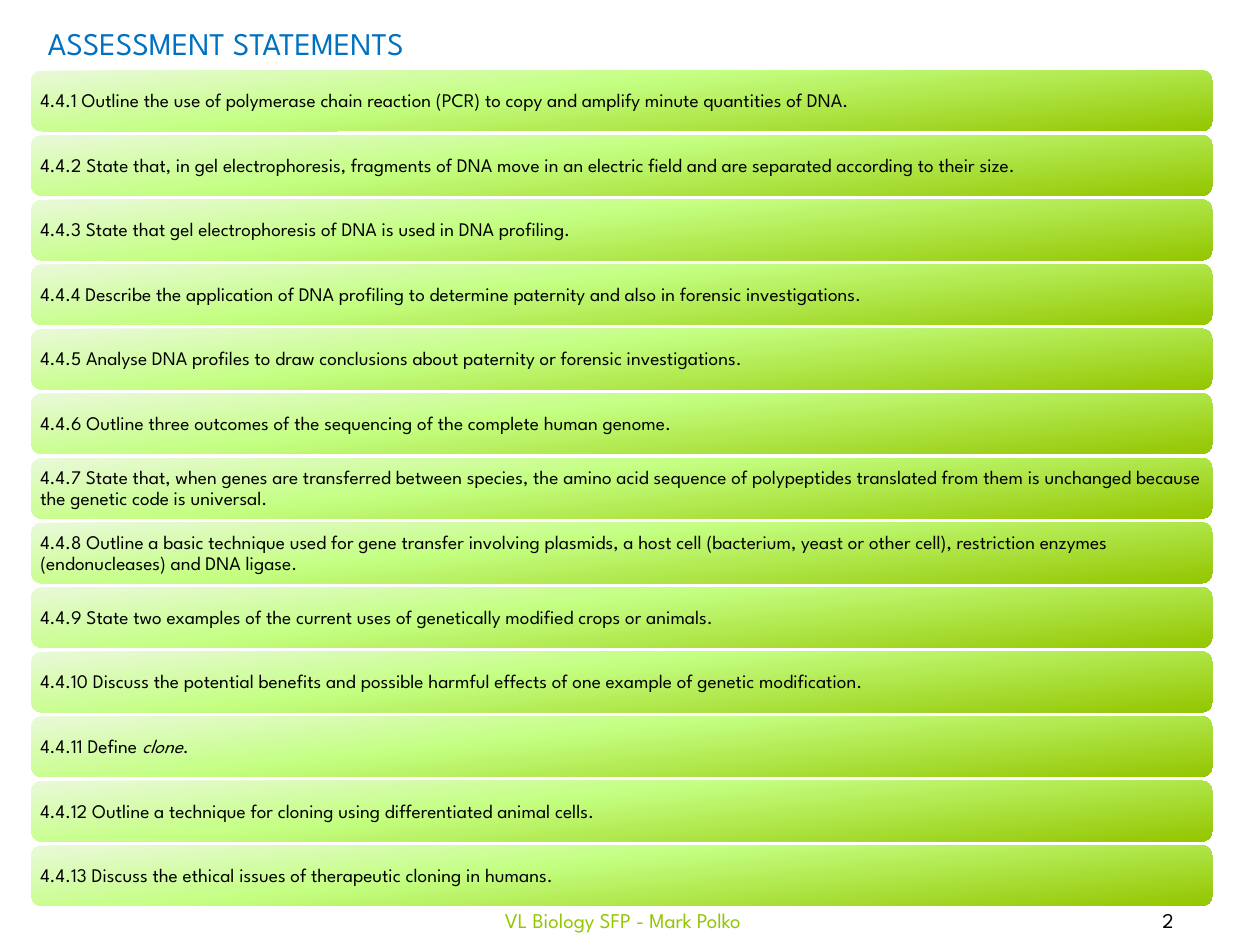
from copy import deepcopy
from dataclasses import dataclass

from pptx import Presentation
from pptx.dml.color import RGBColor
from pptx.enum.shapes import MSO_SHAPE as Shape
from pptx.enum.text import MSO_ANCHOR as Anchor, MSO_AUTO_SIZE as AutoSize, PP_ALIGN as Align
from pptx.util import Inches, Pt


@dataclass(frozen=True)
class Theme:
    font: str = "League Spartan"
    title: str = "0070C0"
    text: str = "000000"
    accent: str = "94C600"
    gradient: tuple = ((0, "EAF9DA"), (0.4, "C4FF82"), (1, "94C600"))
    title_size: int = 18
    footer_size: int = 12
    body_size: int = 11


theme = Theme()


def add_text(parent, left, top, width, height, runs, size, color, align=Align.LEFT, anchor=Anchor.MIDDLE):
    box = parent.shapes.add_textbox(Inches(left), Inches(top), Inches(width), Inches(height))
    frame = box.text_frame
    frame.word_wrap = True
    frame.vertical_anchor = anchor
    para = frame.paragraphs[0]
    para.alignment = align
    for words, italic in runs:
        span = para.add_run()
        span.text = words
        span.font.name = theme.font
        span.font.size = Pt(size)
        span.font.italic = italic
        span.font.color.rgb = RGBColor.from_string(color)
    return frame


def fill_gradient(shape):
    shape.fill.gradient()
    shape.fill.gradient_angle = 276
    stop_list = shape.fill._fill._gradFill.gsLst
    stop_list.append(deepcopy(stop_list[-1]))
    for stop, (position, color) in zip(shape.fill.gradient_stops, theme.gradient):
        stop.position = position
        stop.color.rgb = RGBColor.from_string(color)


deck = Presentation()
deck.slide_width, deck.slide_height = Inches(10), Inches(7.5)
page = deck.slides.add_slide(deck.slide_layouts[6])

add_text(page, 8.54, 7.1, 1.46, 0.4, [("2", False)], theme.footer_size, theme.text, Align.CENTER)
add_text(page, 3.03, 7.1, 3.83, 0.4, [("VL Biology SFP - Mark Polko", False)],
         theme.footer_size, theme.accent, Align.CENTER)
title = add_text(page, 0.28, 0.14, 3.21, 0.71, [("ASSESSMENT STATEMENTS", False)],
                 theme.title_size, theme.title, anchor=Anchor.TOP)
title.word_wrap = False
title.auto_size = AutoSize.SHAPE_TO_FIT_TEXT

statements = [
    [("Outline the use of polymerase chain reaction (PCR) to copy and amplify minute quantities of DNA.", False)],
    [("State that, in gel electrophoresis, fragments of DNA move in an electric field and are separated "
      "according to their size.", False)],
    [("State that gel electrophoresis of DNA is used in DNA profiling.", False)],
    [("Describe the application of DNA profiling to determine paternity and also in forensic investigations.", False)],
    [("Analyse DNA profiles to draw conclusions about paternity or forensic investigations.", False)],
    [("Outline three outcomes of the sequencing of the complete human genome.", False)],
    [("State that, when genes are transferred between species, the amino acid sequence of polypeptides "
      "translated from them is unchanged because the genetic code is universal.", False)],
    [("Outline a basic technique used for gene transfer involving plasmids, a host cell (bacterium, yeast "
      "or other cell), restriction enzymes (endonucleases) and DNA ligase.", False)],
    [("State two examples of the current uses of genetically modified crops or animals.", False)],
    [("Discuss the potential benefits and possible harmful effects of one example of genetic modification.", False)],
    [("Define ", False), ("clone", True), (".", False)],
    [("Outline a technique for cloning using differentiated animal cells.", False)],
    [("Discuss the ethical issues of therapeutic cloning in humans.", False)],
]
first_top, last_top = 0.56, 6.71
pitch = (last_top - first_top) / (len(statements) - 1)

statement_list = page.shapes.add_group_shape()
for index, ((opening, italic), *rest) in enumerate(statements):
    top = first_top + index * pitch
    bar = statement_list.shapes.add_shape(
        Shape.ROUNDED_RECTANGLE, Inches(0.25), Inches(top), Inches(9.37), Inches(0.48))
    bar.shadow.inherit = False
    bar.line.fill.background()
    fill_gradient(bar)

    runs = [(f"4.4.{index + 1} {opening}", italic), *rest]
    frame = add_text(statement_list, 0.28, top + 0.03, 9.32, 0.43, runs, theme.body_size, theme.text)
    frame.margin_left = frame.margin_right = Inches(0.04)
    frame.margin_top = frame.margin_bottom = Inches(0.05)
    frame.paragraphs[0].line_spacing = 0.9

deck.save("out.pptx")
